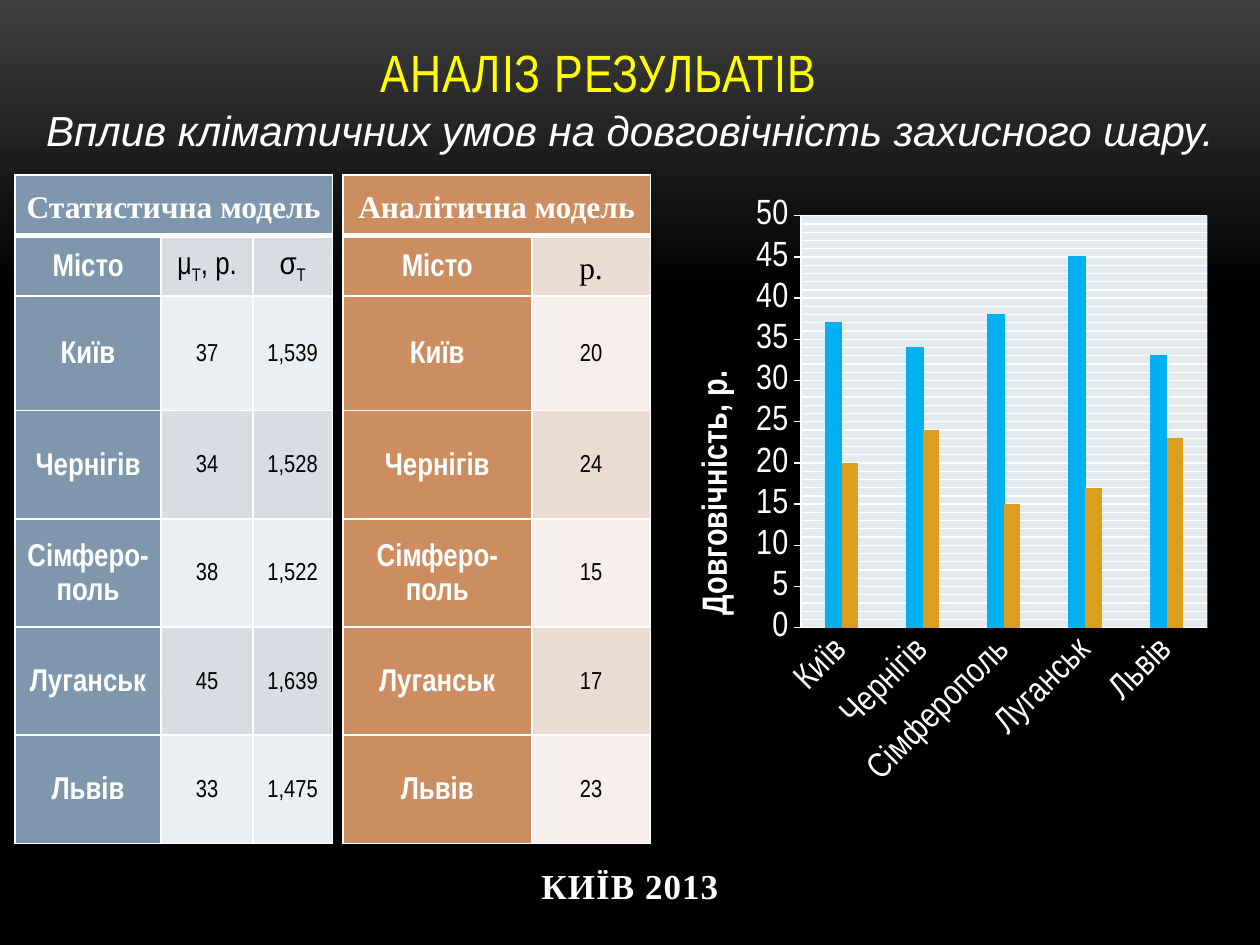
from lxml import etree
from pptx import Presentation
from pptx.chart.data import CategoryChartData
from pptx.dml.color import RGBColor
from pptx.enum.chart import XL_CHART_TYPE, XL_TICK_MARK
from pptx.enum.text import MSO_ANCHOR, PP_ALIGN
from pptx.oxml import parse_xml
from pptx.oxml.ns import nsdecls, qn
from pptx.util import Cm, Pt

CENTER, MIDDLE = PP_ALIGN.CENTER, MSO_ANCHOR.MIDDLE
BARS = XL_CHART_TYPE.COLUMN_CLUSTERED
NO_TICK, OUT = XL_TICK_MARK.NONE, XL_TICK_MARK.OUTSIDE
HEX = {
    "white": "FFFFFF", "black": "000000", "gray": "3F3F3F", "yellow": "FFFF00",
    "steel": "7E97AD", "steel mid": "D8DDE3", "steel pale": "ECEFF1",
    "clay": "CC8E60", "clay mid": "ECDBD2", "clay pale": "F6EEEA",
    "plot": "E5EAEF", "sky": "00B0F0", "gold": "DC9E1F",
}
RGB = {name: RGBColor.from_string(code) for name, code in HEX.items()}
NARROW, TIMES = "Arial Narrow", "Times New Roman"


def write(frame, text, color, space=0, **form):
    """Fill a frame with one centred line; every second piece between bars is a subscript."""
    frame.word_wrap = True
    para = frame.paragraphs[0]
    para.alignment = CENTER
    for num, piece in enumerate(text.split("|")):
        run = para.add_run()
        run.text = piece
        run.font.color.rgb = RGB[color]
        for key, value in form.items():
            setattr(run.font, key, value)
        props = run._r.get_or_add_rPr()
        if space:
            props.set("spc", str(space))
        if num % 2:
            props.set("baseline", "-25000")
    return para


def edge(cell, low):
    """Draw white borders round a cell, the lower one `low` points wide."""
    props = cell._tc.get_or_add_tcPr()
    for side, width in zip("LRTB", (1, 1, 1, low)):
        props.append(parse_xml(
            f'<a:ln{side} {nsdecls("a")} w="{Pt(width)}"><a:solidFill>'
            f'<a:srgbClr val="{HEX["white"]}"/></a:solidFill></a:ln{side}>'))


deck = Presentation()
deck.slide_width, deck.slide_height = Cm(25.4), Cm(19.05)
slide = deck.slides.add_slide(deck.slide_layouts[6])

back = slide.background.fill
back.gradient()
back.gradient_angle = 270
for stop, (place, color) in zip(back.gradient_stops, ((0, "gray"), (0.31, "black"))):
    stop.position = place
    stop.color.rgb = RGB[color]

# Headings and footer
lines = [
    ((1.7, 0.46, 20.75, 1.75), MSO_ANCHOR.BOTTOM, "АНАЛІЗ РЕЗУЛЬАТІВ", "yellow",
     {"size": Pt(30), "name": NARROW, "space": 50}),
    ((0.46, 1.96, 24.48, 1.3), MIDDLE,
     "Вплив кліматичних умов на довговічність захисного шару.", "white",
     {"size": Pt(24), "name": "Arial", "italic": True}),
    ((0, 16.87, 25.4, 1.98), MIDDLE, "КИЇВ 2013", "white",
     {"size": Pt(20), "name": TIMES, "bold": True, "space": 60}),
]
for place, anchor, text, color, form in lines:
    frame = slide.shapes.add_textbox(*map(Cm, place)).text_frame
    frame.vertical_anchor = anchor
    write(frame, text, color, **form)

# Tables
towns = ["Київ", "Чернігів", "Сімферо-поль", "Луганськ", "Львів"]
means = [37, 34, 38, 45, 33]
sigmas = ["1,539", "1,528", "1,522", "1,639", "1,475"]
model = [20, 24, 15, 17, 23]
highs = [1.22, 1.22, 2.31] + [2.18] * 4
tables = [
    (0.3, (2.95, 1.85, 1.6), "steel", "Статистична модель", NARROW,
     ["Місто", "μ|Т|, р.", "σ|Т"], (towns, means, sigmas)),
    (6.91, (3.81, 2.39), "clay", "Аналітична модель", TIMES,
     ["Місто", "р."], (towns, model)),
]
for left, wides, hue, title, face, heads, cols in tables:
    rows = [[title] + [""] * (len(wides) - 1), heads, *zip(*cols)]
    table = slide.shapes.add_table(len(rows), len(wides), Cm(left), Cm(3.53),
                                   Cm(sum(wides)), Cm(sum(highs))).table
    for col, wide in zip(table.columns, wides):
        col.width = Cm(wide)
    for row, high in zip(table.rows, highs):
        row.height = Cm(high)
    table.cell(0, 0).merge(table.cell(0, len(wides) - 1))
    for r, row in enumerate(rows):
        for c, text in enumerate(row):
            cell = table.cell(r, c)
            key = r == 0 or c == 0
            edge(cell, 3 if r == 0 else 1)
            cell.fill.solid()
            cell.fill.fore_color.rgb = RGB[hue if key else hue + (" mid" if r % 2 else " pale")]
            cell.vertical_anchor = MIDDLE
            cell.margin_left = cell.margin_right = Cm(0.18)
            cell.margin_top = cell.margin_bottom = 0
            if text:
                font = TIMES if r == 0 else face if r == 1 and c else NARROW
                para = write(cell.text_frame, str(text), "white" if key else "black",
                             size=Pt(18 if key or r == 1 else 14), name=font, bold=key)
                para.line_spacing = 1.15

# Chart
data = CategoryChartData()
data.categories = [town.replace("-", "") for town in towns]
data.add_series("Статистична модель", means)
data.add_series("Аналітична модель", model)
chart = slide.shapes.add_chart(BARS, Cm(13.49), Cm(3.73), Cm(11.07), Cm(12.4), data).chart
chart.has_legend = chart.has_title = False
chart.font.size, chart.font.name = Pt(20), NARROW
chart.font.color.rgb = RGB["white"]

plot = chart.plots[0]
plot.gap_width, plot.overlap, plot.vary_by_categories = 300, 0, False
for bars, color in zip(plot.series, ("sky", "gold")):
    bars.format.fill.solid()
    bars.format.fill.fore_color.rgb = RGB[color]
first = plot.series[0].format.line
first.color.rgb, first.width = RGB["sky"], Pt(0.75)

base = chart.category_axis
base.major_tick_mark = NO_TICK
base.format.line.fill.background()
base.tick_labels.font.size = Pt(20)
base.tick_labels.font.color.rgb = RGB["white"]
base._element.find(qn("c:txPr")).find(qn("a:bodyPr")).set("rot", "-2700000")

scale = chart.value_axis
scale.minimum_scale, scale.maximum_scale = 0, 50
scale.major_unit, scale.minor_unit = 5, 1
scale.major_tick_mark = OUT
scale.has_major_gridlines = scale.has_minor_gridlines = True
for part in (scale, scale.major_gridlines):
    part.format.line.color.rgb = RGB["white"]
    part.format.line.width = Pt(0.75)
scale._element.find(qn("c:minorGridlines")).append(parse_xml(
    f'<c:spPr {nsdecls("c", "a")}><a:ln w="{Pt(0.75)}"><a:solidFill>'
    f'<a:srgbClr val="{HEX["white"]}"/></a:solidFill></a:ln></c:spPr>'))
write(scale.axis_title.text_frame, "Довговічність, р.", "white",
      size=Pt(20), name=NARROW, bold=True)

area = chart._chartSpace.chart.plotArea
for old in area.findall(qn("c:layout")):
    area.remove(old)
layout = parse_xml(f'<c:layout {nsdecls("c")}><c:manualLayout/></c:layout>')
spots = {"layoutTarget": "inner", "xMode": "edge", "yMode": "edge",
         "x": 0.24, "y": 0.05, "w": 0.74, "h": 0.67}
for tag, value in spots.items():
    etree.SubElement(layout[0], qn("c:" + tag)).set("val", str(value))
area.insert(0, layout)
area.append(parse_xml(
    f'<c:spPr {nsdecls("c", "a")}><a:solidFill><a:srgbClr val="{HEX["plot"]}"/>'
    '</a:solidFill></c:spPr>'))

deck.save("out.pptx")
